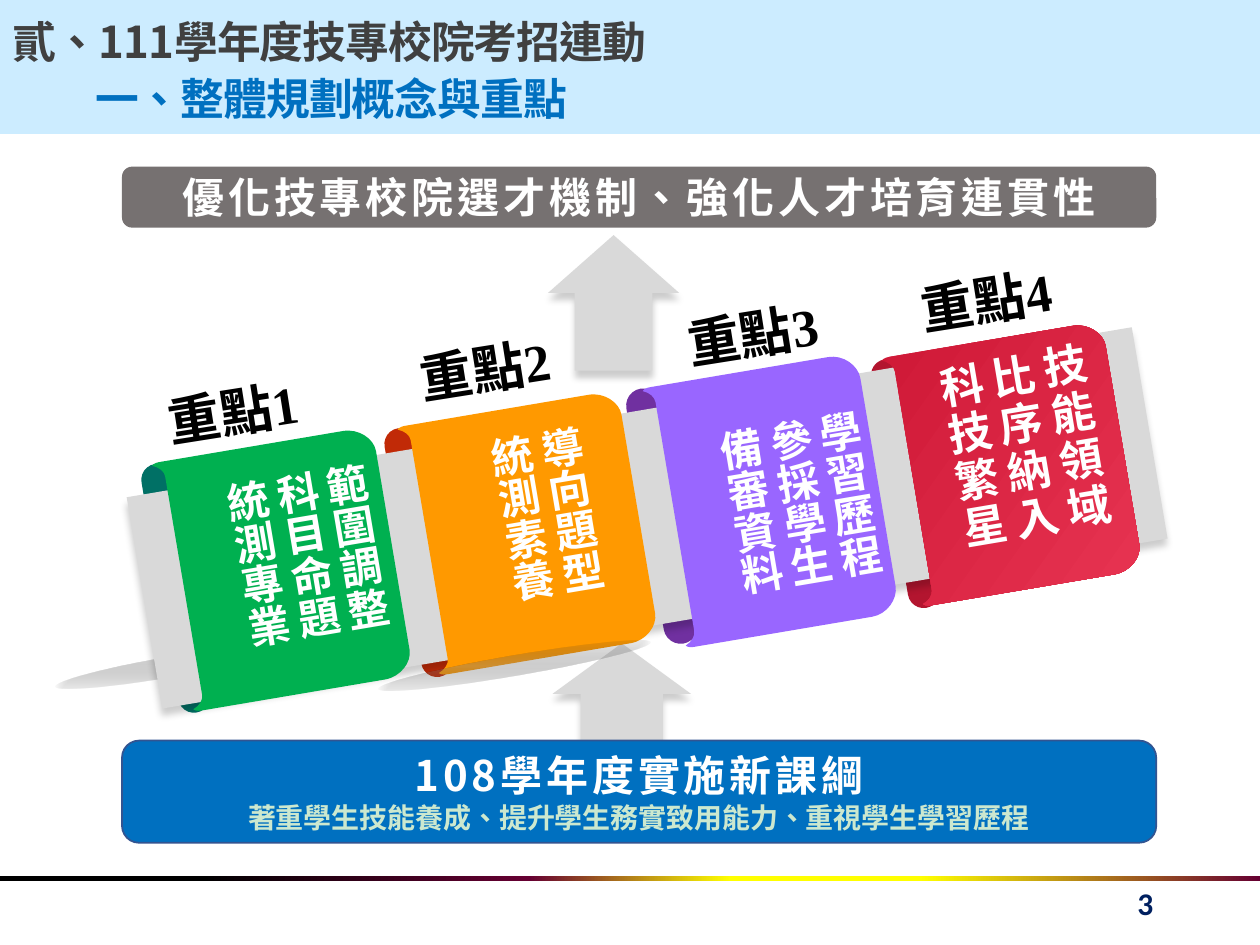
from lxml.etree import Element, SubElement
from pptx import Presentation
from pptx.dml.color import RGBColor
from pptx.enum.shapes import MSO_SHAPE
from pptx.enum.text import MSO_ANCHOR, PP_ALIGN
from pptx.oxml.ns import qn
from pptx.util import Cm, Pt

CJK = "Noto Sans CJK SC"
GREY = "D9D9D9"
TILT = 350.4
SHADE = [(0, "808080", 38), (100, "000000", 0)]
RULE = [(16, "000000", 100), (42, "660032", 100), (58, "FFFF00", 100),
        (73, "FFFF00", 100), (100, "660032", 100)]
RED = [(0, "CE1836", 100), (100, "E83452", 100)]
PANEL = [
    [(0.04, 0)],
    [(0.87, 0)],
    [(0.94, 0), (1, 0.05), (1, 0.1)],
    [(1, 0.9)],
    [(1, 0.95), (0.94, 1), (0.87, 1)],
    [(0.04, 1)],
    [(0.03, 1), (0.01, 1), (0, 0.99)],
    [(0.03, 0.98), (0.05, 0.96), (0.05, 0.94)],
    [(0.05, 0.06)],
    [(0.05, 0.04), (0.03, 0.02), (0, 0.01)],
    [(0.01, 0), (0.03, 0), (0.04, 0)],
]


def rgb(color):
    return RGBColor.from_string(color)


def add_color(parent, color, alpha):
    clr = SubElement(parent, qn("a:srgbClr"), val=color)
    if alpha < 100:
        SubElement(clr, qn("a:alpha"), val=str(alpha * 1000))


def fill_gradient(sp, stops, angle=None):
    sp.fill.background()
    spPr = sp._element.spPr
    old = spPr.find(qn("a:noFill"))
    grad = SubElement(spPr, qn("a:gradFill"), rotWithShape="1")
    gs_list = SubElement(grad, qn("a:gsLst"))
    for pos, color, alpha in stops:
        add_color(SubElement(gs_list, qn("a:gs"), pos=str(pos * 1000)), color, alpha)
    if angle is None:
        center = SubElement(grad, qn("a:path"), path="shape")
        SubElement(center, qn("a:fillToRect"), l="50000", t="50000", r="50000", b="50000")
    else:
        SubElement(grad, qn("a:lin"), ang=str(angle * 60000), scaled="0")
    spPr.replace(old, grad)


def paint(sp, fill, angle=None):
    sp.shadow.inherit = False
    sp.line.fill.background()
    if isinstance(fill, str):
        sp.fill.solid()
        sp.fill.fore_color.rgb = rgb(fill)
    else:
        fill_gradient(sp, fill, angle)


def add_shape(s, kind, box, fill, rot=0, adj=(), angle=None):
    sp = s.shapes.add_shape(kind, *map(Cm, box))
    sp.rotation = rot
    for i, value in enumerate(adj):
        sp.adjustments[i] = value
    paint(sp, fill, angle)
    return sp


def add_shadow(sp):
    effects = sp._element.spPr.find(qn("a:effectLst"))
    shadow = SubElement(effects, qn("a:outerShdw"), blurRad=str(Pt(4)), dist=str(Pt(4)),
                        dir="5400000", algn="t", rotWithShape="0")
    add_color(shadow, "000000", 20)


def add_arrow(s, box):
    add_shadow(add_shape(s, MSO_SHAPE.UP_ARROW, box, GREY, adj=(0.594, 0.441)))


def add_panel(s, box, fill):
    x, y, w, h = box
    ends = [(Cm(x + px * w), Cm(y + py * h)) for *_, (px, py) in PANEL]
    builder = s.shapes.build_freeform(*ends[0], scale=1.0)
    builder.add_line_segments(ends[1:], close=True)
    sp = builder.convert_to_shape()
    lines = list(sp._element.spPr.iter(qn("a:lnTo")))
    for line, segment in zip(lines, PANEL[1:]):
        if len(segment) == 3:
            curve = Element(qn("a:cubicBezTo"))
            for px, py in segment:
                SubElement(curve, qn("a:pt"), x=str(Cm(px * w)), y=str(Cm(py * h)))
            line.getparent().replace(line, curve)
    sp.rotation = TILT
    paint(sp, fill, 45)


def set_text(sp, lines, size, color, align=PP_ALIGN.LEFT, font=CJK, spacing=0,
             anchor=MSO_ANCHOR.TOP):
    tf = sp.text_frame
    tf.word_wrap = True
    tf.vertical_anchor = anchor
    tf.text = "\n".join(lines)
    for p in tf.paragraphs:
        p.alignment = align
        for r in p.runs:
            format_run(r, size, color, font, spacing)
    return tf


def format_run(r, size, color, font=CJK, spacing=0):
    r.font.size = Pt(size)
    r.font.bold = True
    r.font.name = font
    r.font.color.rgb = rgb(color)
    rPr = r.font._element
    rPr.set("lang", "zh-TW")
    rPr.set("spc", str(round(spacing * 100)))
    ea = rPr.find(qn("a:ea"))
    if ea is None:
        ea = SubElement(rPr, qn("a:ea"))
    ea.set("typeface", CJK)


def add_text(s, box, lines, size, color, rot=0, vertical=False, **style):
    sp = s.shapes.add_textbox(*map(Cm, box))
    sp.rotation = rot
    tf = set_text(sp, lines, size, color, **style)
    if vertical:
        tf._txBody.bodyPr.set("vert", "eaVert")


def add_header(s):
    sp = add_shape(s, MSO_SHAPE.RECTANGLE, (0, 0, 25.4, 2.7), "CCECFF")
    tf = set_text(sp, ["貳、111學年度技專校院考招連動", "一、整體規劃概念與重點"],
                  25, "404040", spacing=-0.5, anchor=MSO_ANCHOR.MIDDLE)
    for p in tf.paragraphs:
        p.line_spacing = 1.1
    p = tf.paragraphs[1]
    p._p.get_or_add_pPr().set("marL", str(Cm(1.67)))
    p.runs[0].font.color.rgb = rgb("0070C0")


def add_banner(s, box, fill, lines):
    sp = add_shape(s, MSO_SHAPE.ROUNDED_RECTANGLE, box, fill)
    set_text(sp, lines, 24, "FFFFFF", PP_ALIGN.CENTER, spacing=2.2,
             anchor=MSO_ANCHOR.MIDDLE)
    return sp


def add_ribbon(s):
    for box, color in [((13, 7.8, 0.69, 5.21), "7030A0"), ((8.12, 8.6, 0.64, 5.08), "C12A07"),
                       ((17.93, 7.21, 0.64, 5.08), "B3152F"), ((3.22, 9.32, 0.64, 5.08), "007065")]:
        add_shape(s, MSO_SHAPE.ROUNDED_RECTANGLE, box, color, TILT, (0.5,))
    add_shadow(add_shape(s, MSO_SHAPE.RECTANGLE, (2.77, 8.28, 20.55, 4.32), GREY, TILT))
    add_panel(s, (3.45, 8.93, 4.5, 5.08), "00B050")
    add_panel(s, (8.4, 8.2, 4.5, 5.08), "FF9900")
    add_panel(s, (18.16, 6.81, 4.5, 5.08), RED)
    add_shape(s, MSO_SHAPE.OVAL, (7.59, 13.21, 5.56, 0.41), SHADE, TILT)
    add_panel(s, (13.36, 7.43, 4.37, 5.31), "9966FF")


def add_points(s):
    center, justify = PP_ALIGN.CENTER, PP_ALIGN.JUSTIFY
    points = [
        ((3.12, 7.5), (3.79, 9.32, 4.09, 4.29), ["範圍調整", "科目命題統測專業"], 24, center, 0),
        ((8.2, 6.63), (9.27, 8.48, 2.92, 4.22), ["導向題型", "統測素養"], 24, center, 0),
        ((13.6, 5.93), (13.75, 8.26, 4.09, 4.55), ["學習歷程", "參採學生", "備審資料"], 24, justify, 0),
        ((18.31, 5.24), (18.16, 6.91, 4.24, 4.8), ["技能領域比序納入", "科技繁星"], 25, center, 2.2),
    ]
    for number, (corner, box, lines, size, align, spacing) in enumerate(points, 1):
        add_text(s, box, lines, size, "FFFFFF", TILT, True, align=align, spacing=spacing)
        add_text(s, (*corner, 3.66, 1.55), [f"重點{number}"], 30, "000000", 351,
                 font="Times New Roman")


def main():
    prs = Presentation()
    prs.slide_width, prs.slide_height = Cm(25.4), Cm(19.05)
    s = prs.slides.add_slide(prs.slide_layouts[6])
    s.background.fill.solid()
    s.background.fill.fore_color.rgb = rgb("FFFFFF")
    add_shape(s, MSO_SHAPE.RECTANGLE, (0, 17.65, 25.4, 0.11), RULE, angle=0)
    add_text(s, (21.95, 17.7, 1.55, 1.02), ["3"], 18, "002060", align=PP_ALIGN.RIGHT,
             font="Calibri")
    add_header(s)
    add_arrow(s, (11.05, 4.74, 2.64, 2.73))
    add_arrow(s, (11.14, 12.97, 2.79, 2.31))
    add_shape(s, MSO_SHAPE.OVAL, (1.09, 13.23, 4.88, 0.41), SHADE, TILT)
    base = add_banner(s, (2.46, 14.93, 20.85, 2.06), "0070C0",
                      ["108學年度實施新課綱",
                       "著重學生技能養成、提升學生務實致用能力、重視學生學習歷程"])
    base.line.color.rgb = rgb("325491")
    base.line.width = Pt(1)
    format_run(base.text_frame.paragraphs[1].runs[0], 16, "CCE8CF")
    add_banner(s, (2.46, 3.36, 20.85, 1.23), "767171", ["優化技專校院選才機制、強化人才培育連貫性"])
    add_ribbon(s)
    add_points(s)
    prs.save("out.pptx")


if __name__ == "__main__":
    main()
